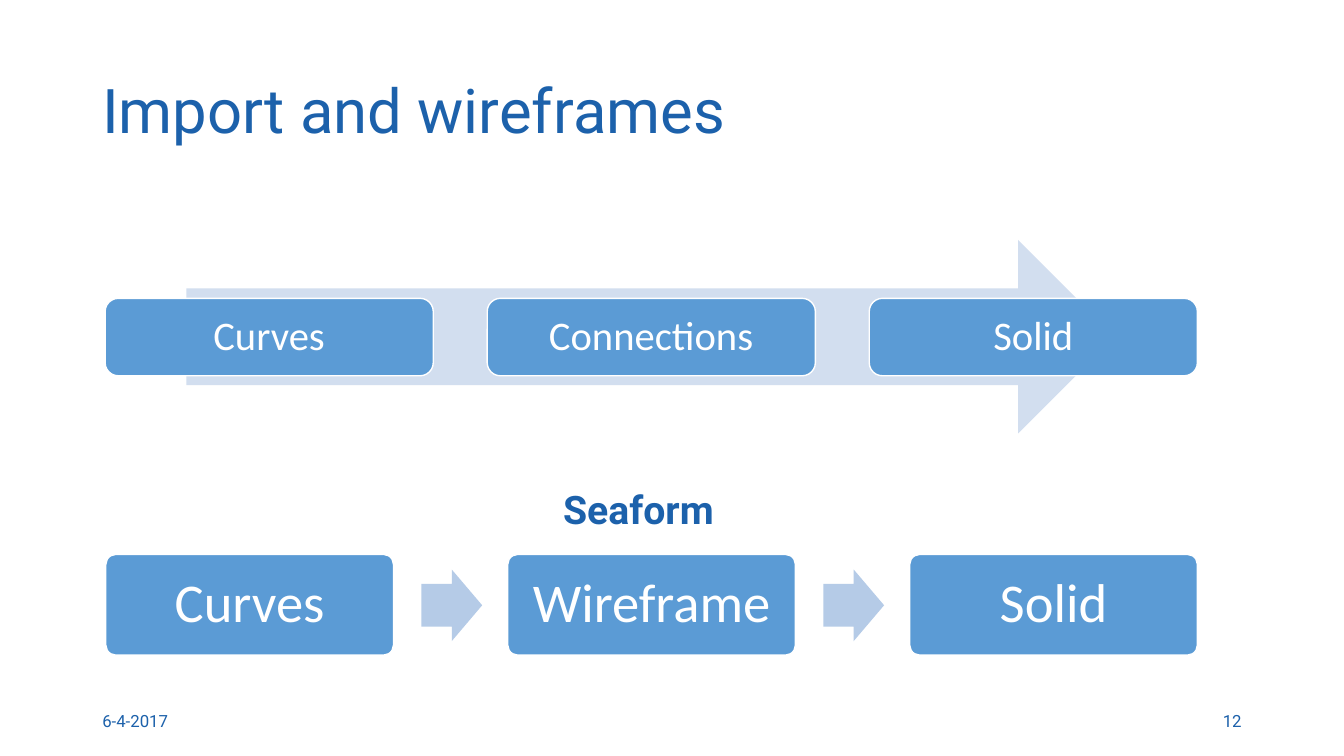
"""Build the slide "Import and wireframes" with its two process diagrams."""
from pptx import Presentation
from pptx.dml.color import RGBColor
from pptx.enum.shapes import MSO_SHAPE
from pptx.enum.text import MSO_ANCHOR, PP_ALIGN
from pptx.util import Pt

ROUNDED, ARROW = MSO_SHAPE.ROUNDED_RECTANGLE, MSO_SHAPE.RIGHT_ARROW
MIDDLE, TOP = MSO_ANCHOR.MIDDLE, MSO_ANCHOR.TOP
LEFT, CENTER, RIGHT = PP_ALIGN.LEFT, PP_ALIGN.CENTER, PP_ALIGN.RIGHT
NAVY, BLUE, WHITE = "1C61AB", "5B9BD5", "FFFFFF"


def color(hex_value):
    return RGBColor.from_string(hex_value)


def write(holder, text, size, font, hex_value, align, anchor=MIDDLE, spacing=1.0, bold=False):
    frame = holder.text_frame
    frame.word_wrap = True
    frame.vertical_anchor = anchor
    paragraph = frame.paragraphs[0]
    paragraph.text = text
    paragraph.alignment = align
    paragraph.line_spacing = spacing
    paragraph.font.size = Pt(size)
    paragraph.font.name = font
    paragraph.font.bold = bold
    paragraph.font.color.rgb = color(hex_value)


prs = Presentation()
prs.slide_width, prs.slide_height = Pt(960), Pt(540)
slide = prs.slides.add_slide(prs.slide_layouts[6])
shapes = slide.shapes

title = shapes.add_textbox(Pt(66), Pt(28.8), Pt(828), Pt(104.4))
write(title, "Import and wireframes", 44, "Roboto", NAVY, LEFT, spacing=0.9)

flow_arrows = [
    (133.2, 171.4, 663.1, 138.2, 0.5, "D2DEEF"),
    (301, 406.8, 43.4, 51.1, 0.6, "B5CBE7"),
    (588.1, 406.8, 43.4, 51.1, 0.6, "B5CBE7"),
]
for left, top, width, height, shaft, fill in flow_arrows:
    arrow = shapes.add_shape(ARROW, Pt(left), Pt(top), Pt(width), Pt(height))
    arrow.adjustments[0] = shaft
    arrow.shadow.inherit = False
    arrow.fill.solid()
    arrow.fill.fore_color.rgb = color(fill)
    arrow.line.fill.background()

step_rows = [
    (("Curves", "Connections", "Solid"), 75.1, 213.1, 234.4, 55.3, 272.9, 0.17, 29),
    (("Curves", "Wireframe", "Solid"), 75.6, 396, 205.5, 72, 287.1, 0.1, 39),
]
for steps, left, top, width, height, pitch, rounding, size in step_rows:
    for index, label in enumerate(steps):
        step = shapes.add_shape(ROUNDED, Pt(left + index * pitch), Pt(top), Pt(width), Pt(height))
        step.adjustments[0] = rounding
        step.shadow.inherit = False
        step.fill.solid()
        step.fill.fore_color.rgb = color(BLUE)
        step.line.color.rgb = color(WHITE)
        step.line.width = Pt(1)
        frame = step.text_frame
        frame.margin_left = frame.margin_right = frame.margin_top = frame.margin_bottom = Pt(4)
        write(step, label, size, "Calibri", WHITE, CENTER, spacing=0.9)

program = shapes.add_textbox(Pt(288), Pt(343.4), Pt(336), Pt(41))
write(program, "Seaform", 28, "Roboto", NAVY, CENTER, anchor=TOP, bold=True)

for text, left, align in (("6-4-2017", 66, LEFT), ("12", 678, RIGHT)):
    footer = shapes.add_textbox(Pt(left), Pt(500.5), Pt(216), Pt(28.8))
    write(footer, text, 12, "Roboto", NAVY, align)

prs.save("out.pptx")
